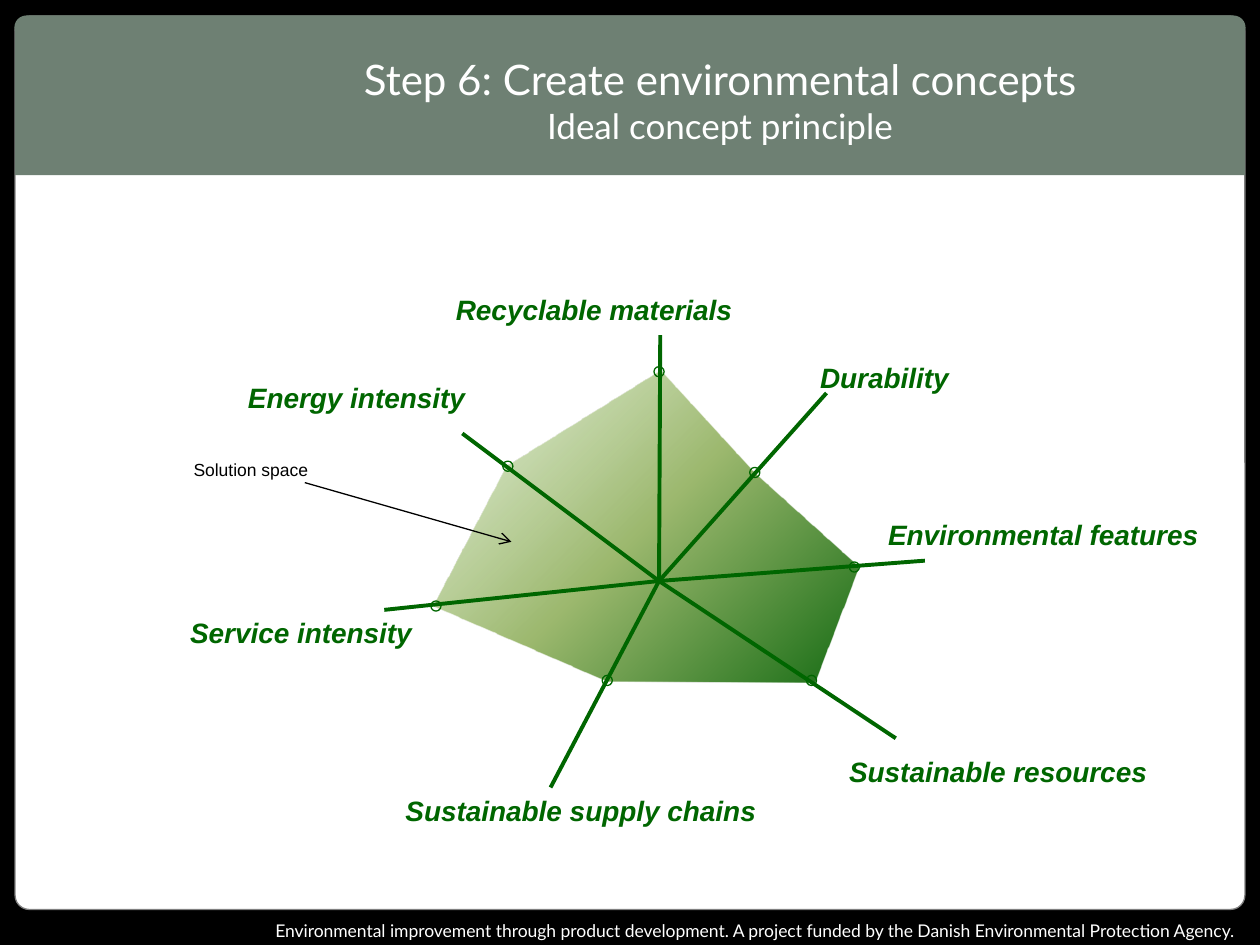
from lxml import etree
from pptx import Presentation, util as u
from pptx.dml import color
from pptx.enum import shapes, text
from pptx.oxml import ns

GREEN = "006600"
BANNER = "6E8073"
CENTRE = (376.6, 332)
LABEL_HEIGHT = 26.6
MARKER = 5.8

# label, label left, label top, label width, axis end, polygon vertex, marker centre
AXES = [
    ("Recyclable materials", 253.4, 163.4, 219.6, (377.3, 191.5), (377.3, 211.7), (376.6, 212.4)),
    ("Durability", 461.5, 202.3, 219.6, (472.3, 224.6), (431.3, 270.7), (431.3, 270)),
    ("Environmental features", 500.4, 292.3, 196.6, (528.5, 320.4), (490.3, 324), (488.2, 324)),
    ("Sustainable resources", 478.1, 427.7, 185.8, (511.9, 421.9), (465.1, 390.2), (463.7, 388.8)),
    ("Sustainable supply chains", 224.6, 450, 219.6, (314.6, 450), (347, 389.5), (347, 388.8)),
    ("Service intensity", 101.5, 348.5, 151.9, (219.6, 348.5), (247.7, 346.3), (249.1, 346.3)),
    ("Energy intensity", 134.6, 213.8, 157.7, (264.2, 247.7), (289.4, 266.4), (290.2, 266.4)),
]


def rgb(value):
    return color.RGBColor.from_string(value)


def add_box(parent, kind, left, top, width, height, fill=None, line=None, adjust=None):
    shape = parent.shapes.add_shape(kind, u.Pt(left), u.Pt(top), u.Pt(width), u.Pt(height))
    shape.shadow.inherit = False
    if adjust is not None:
        shape.adjustments[0] = adjust
    if fill:
        shape.fill.solid()
        shape.fill.fore_color.rgb = rgb(fill)
    else:
        shape.fill.background()
    if line:
        shape.line.color.rgb = rgb(line)
        shape.line.width = u.Pt(0.75)
    else:
        shape.line.fill.background()
    return shape


def add_text(slide, lines, left, top, width, height, sizes, font="Arial", fill=GREEN,
             bold=False, italic=False, align=text.PP_ALIGN.LEFT, anchor=text.MSO_ANCHOR.TOP):
    box = slide.shapes.add_textbox(u.Pt(left), u.Pt(top), u.Pt(width), u.Pt(height))
    frame = box.text_frame
    frame.word_wrap = True
    frame.vertical_anchor = anchor
    paragraph = frame.paragraphs[0]
    paragraph.alignment = align
    for index, (words, size) in enumerate(zip(lines, sizes)):
        if index:
            paragraph.add_line_break()
        run = paragraph.add_run()
        run.text = words
        run.font.name = font
        run.font.size = u.Pt(size)
        run.font.bold = bold
        run.font.italic = italic
        run.font.color.rgb = rgb(fill)


def add_line(slide, start, end, fill, width, arrow=False):
    line = slide.shapes.add_connector(
        shapes.MSO_CONNECTOR.STRAIGHT, *(u.Pt(value) for value in start + end))
    line.line.color.rgb = rgb(fill)
    line.line.width = u.Pt(width)
    if arrow:
        etree.SubElement(line.line._get_or_add_ln(), ns.qn("a:tailEnd"), type="arrow")
    etree.SubElement(line._element.spPr, ns.qn("a:effectLst"))


def add_solution_space(slide, points, stops):
    first, *rest = [(u.Pt(x), u.Pt(y)) for x, y in points]
    builder = slide.shapes.build_freeform(*first)
    builder.add_line_segments(rest, close=True)
    shape = builder.convert_to_shape()
    shape.shadow.inherit = False
    shape.line.fill.background()
    shape.fill.gradient()
    shape.fill.gradient_angle = 315
    stop_list = shape._element.spPr.find(".//" + ns.qn("a:gsLst"))
    for stop in list(stop_list):
        stop_list.remove(stop)
    for position, value, opacity in stops:
        stop = etree.SubElement(stop_list, ns.qn("a:gs"), pos=str(position * 1000))
        tint = etree.SubElement(stop, ns.qn("a:srgbClr"), val=value)
        etree.SubElement(tint, ns.qn("a:alpha"), val=str(opacity * 1000))


def add_frame(slide):
    kind = shapes.MSO_SHAPE
    add_box(slide, kind.RECTANGLE, 0, 0, 720, 540, fill="000000")
    add_box(slide, kind.ROUNDED_RECTANGLE, 8.6, 9.2, 702.8, 510.5, "FFFFFF", "808080", 0.016)
    banner = slide.shapes.add_group_shape()
    add_box(banner, kind.ROUNDED_RECTANGLE, 8.6, 15, 702.8, 85, BANNER, adjust=0)
    add_box(banner, kind.ROUNDED_RECTANGLE, 8.6, 9.2, 702.8, 13, BANNER, BANNER, 0.5)
    add_text(slide, ["Environmental improvement through product development. "
                     "A project funded by the Danish Environmental Protection Agency."],
             14.4, 522, 697.7, 19.4, [10], font="Lato", fill="FFFFFF",
             align=text.PP_ALIGN.RIGHT)


def add_diagram(slide):
    stops = [(0, "DDEBCF", 76), (50, "9CB86E", 76), (100, "156B13", 76)]
    stops = [(position, value, 76 if position == 0 else 100) for position, value, _ in stops]
    add_solution_space(slide, [axis[5] for axis in AXES], stops)
    for label, left, top, width, end, _, _ in AXES:
        add_line(slide, CENTRE, end, GREEN, 2.25)
        add_text(slide, [label], left, top, width, LABEL_HEIGHT, [16], bold=True, italic=True)
    for *_, (x, y) in AXES:
        add_box(slide, shapes.MSO_SHAPE.OVAL, x - MARKER / 2, y - MARKER / 2,
                MARKER, MARKER, line=GREEN)
    add_text(slide, ["Solution space"], 78.5, 258.5, 129.6, 19.4, [10], fill="000000",
             align=text.PP_ALIGN.CENTER)
    add_line(slide, (174.2, 275.8), (292.3, 309.6), "000000", 0.75, arrow=True)


def main():
    presentation = Presentation()
    presentation.slide_width = u.Pt(720)
    presentation.slide_height = u.Pt(540)
    slide = presentation.slides.add_slide(presentation.slide_layouts[6])
    add_frame(slide)
    add_text(slide, ["Step 6: Create environmental concepts", "Ideal concept principle"],
             115.9, 25.9, 591.1, 62.6, [24, 20], font="Lato", fill="FFFFFF",
             align=text.PP_ALIGN.CENTER, anchor=text.MSO_ANCHOR.MIDDLE)
    add_diagram(slide)
    presentation.save("out.pptx")


if __name__ == "__main__":
    main()
